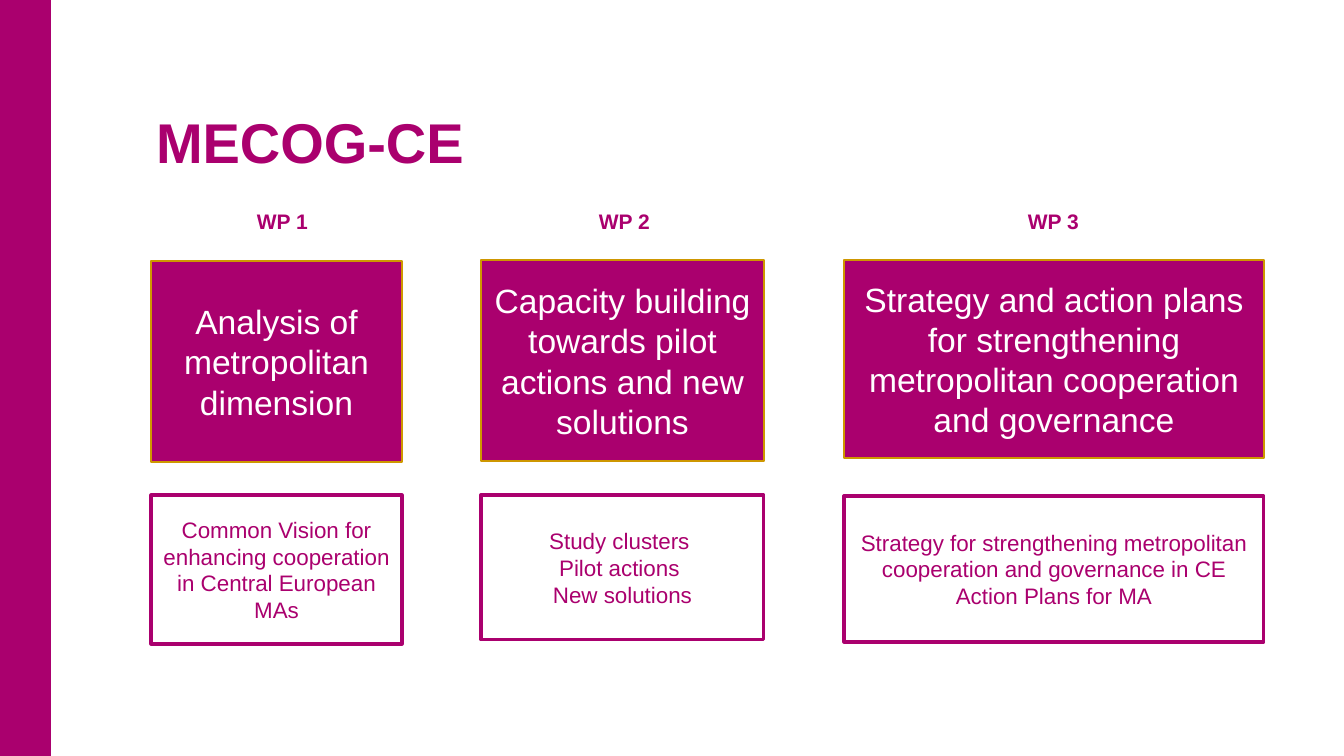
from pptx import Presentation
from pptx.dml.color import RGBColor
from pptx.enum.shapes import MSO_SHAPE
from pptx.enum.text import MSO_ANCHOR, MSO_AUTO_SIZE, PP_ALIGN
from pptx.util import Pt

EMU_PER_PX = 914400 / 100.8
COLORS = {"magenta": "AA006E", "gold": "CE9700", "white": "FFFFFF"}
TITLE_ONLY = 5

# Column left, width, label left; then top and height of both boxes, and their texts
WORK_PACKAGES = [
    (151, 251, 247, (261, 201), (495, 149), "Analysis of metropolitan dimension",
     ["Common Vision for enhancing cooperation in Central European MAs"]),
    (481, 283, 589, (260, 201), (495, 145),
     "Capacity building towards pilot actions and new solutions",
     ["Study clusters ", "Pilot actions ", "New solutions"]),
    (844, 420, 1018, (260, 198), (496, 146),
     "Strategy and action plans for strengthening metropolitan cooperation and governance",
     ["Strategy for strengthening metropolitan cooperation and governance in CE",
      "Action Plans for MA"]),
]


def px(length):
    return round(length * EMU_PER_PX)


def rgb(color):
    return RGBColor.from_string(COLORS[color])


class SlideBuilder:
    def __init__(self, presentation):
        self.font_name = "Arial"
        self.slide = presentation.slides.add_slide(presentation.slide_layouts[TITLE_ONLY])

    def set_text(self, shape, lines, size, color, align, anchor, bold=False, spacing=None):
        frame = shape.text_frame
        frame_format = {"word_wrap": True, "auto_size": MSO_AUTO_SIZE.NONE,
                        "vertical_anchor": anchor}
        for name, value in frame_format.items():
            setattr(frame, name, value)
        frame.text = "\n".join(lines)
        font_format = {"name": self.font_name, "size": Pt(size), "bold": bold}
        for paragraph in frame.paragraphs:
            paragraph.alignment = align
            paragraph.line_spacing = spacing
            font = paragraph.runs[0].font
            for name, value in font_format.items():
                setattr(font, name, value)
            font.color.rgb = rgb(color)

    def title(self, text, left, top, width, height):
        shape = self.slide.shapes.title
        place = {"left": left, "top": top, "width": width, "height": height}
        for name, value in place.items():
            setattr(shape, name, px(value))
        self.set_text(shape, [text], 40, "magenta", PP_ALIGN.LEFT, MSO_ANCHOR.TOP,
                      bold=True, spacing=Pt(40))

    def label(self, text, left, top, width, height):
        shape = self.slide.shapes.add_textbox(*map(px, (left, top, width, height)))
        self.set_text(shape, [text], 15, "magenta", PP_ALIGN.LEFT, MSO_ANCHOR.TOP, bold=True)

    def rectangle(self, left, top, width, height, fill=None, line=None, line_width=0):
        shape = self.slide.shapes.add_shape(
            MSO_SHAPE.RECTANGLE, *map(px, (left, top, width, height)))
        shape.shadow.inherit = False
        if fill:
            shape.fill.solid()
            shape.fill.fore_color.rgb = rgb(fill)
        else:
            shape.fill.background()
        if line:
            shape.line.color.rgb = rgb(line)
            shape.line.width = Pt(line_width)
        else:
            shape.line.fill.background()
        return shape

    def topic(self, text, *place):
        shape = self.rectangle(*place, fill="magenta", line="gold", line_width=2)
        self.set_text(shape, [text], 24, "white", PP_ALIGN.CENTER, MSO_ANCHOR.MIDDLE)

    def outputs(self, lines, *place):
        shape = self.rectangle(*place, line="magenta", line_width=2.25)
        self.set_text(shape, lines, 16, "magenta", PP_ALIGN.CENTER, MSO_ANCHOR.MIDDLE)


def main():
    presentation = Presentation()
    presentation.slide_width = px(1344)
    presentation.slide_height = px(756)

    builder = SlideBuilder(presentation)
    builder.rectangle(0, 0, 51, 756, fill="magenta")
    builder.title("MECOG-CE", 146, 114, 1122, 67)
    for number, package in enumerate(WORK_PACKAGES, start=1):
        left, width, label_left, topic_rows, output_rows, topic, outputs = package
        builder.label(f"WP {number}", label_left, 204, 183, 35)
        builder.topic(topic, left, topic_rows[0], width, topic_rows[1])
        builder.outputs(outputs, left, output_rows[0], width, output_rows[1])

    presentation.save("out.pptx")


if __name__ == "__main__":
    main()
